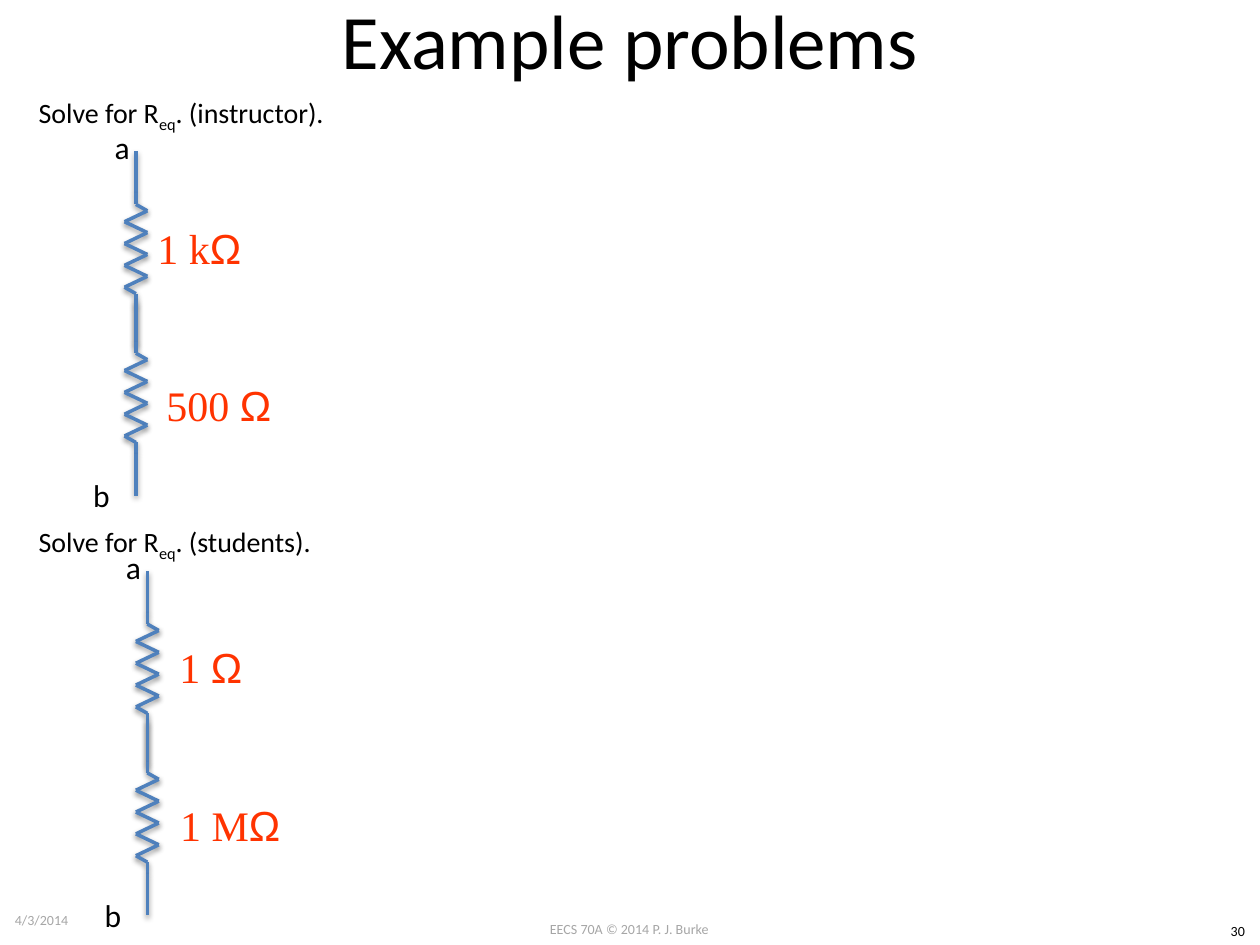
"""Build a slide with two series-resistor example problems."""
from itertools import pairwise

from pptx import Presentation
from pptx.dml.color import RGBColor
from pptx.enum.shapes import MSO_CONNECTOR
from pptx.enum.text import MSO_ANCHOR, PP_ALIGN
from pptx.util import Cm, Pt

COLORS = {"wire": "4F81BD", "value": "FF3300", "text": "000000", "muted": "A6A6A6"}
STYLES = {
    "title": ("text", {"name": "Calibri", "size": Pt(44)}),
    "prompt": ("text", {"name": "Calibri", "size": Pt(16)}),
    "node": ("text", {"name": "Calibri", "size": Pt(18)}),
    "value": ("value", {"name": "Times New Roman", "size": Pt(24)}),
    "unit": ("value", {"name": "Arial", "size": Pt(24)}),
    "footer": ("muted", {"name": "Calibri", "size": Pt(8)}),
    "number": ("text", {"name": "Calibri", "size": Pt(8)}),
}
SUBSCRIPT = "-25000"
CENTER = {"alignment": PP_ALIGN.CENTER}
MIDDLE = {"vertical_anchor": MSO_ANCHOR.MIDDLE}
NO_WRAP = {"word_wrap": False}

TITLE = "Example problems"
CIRCUITS = [
    {"who": "instructor", "values": ["1 k", "500 "], "offset": (0, 0),
     "prompt": (0.53, 1.8, 6.58, 0.94)},
    {"who": "students", "values": ["1 ", "1 M"], "offset": (0.23, 8.46),
     "prompt": (0.53, 10.44, 6.12, 0.94)},
]
NODES = [("a", (2.06, 2.46, 0.81, 1.02)), ("b", (1.63, 9.47, 0.86, 1.02))]
VALUE_BOXES = [(2.51, 4.06, 3.02, 1.85), (2.9, 7.24, 3.02, 1.85)]
FOOTERS = [
    ("EECS 70A © 2014 P. J. Burke", "footer", (9.73, 18.44, 5.92, 0.61), {}, CENTER),
    ("30", "number", (24.51, 18.47, 0.89, 0.61), {}, CENTER),
    ("4/3/2014", "footer", (0.05, 18.03, 5.92, 1.02), MIDDLE, {}),
]
WIRE_X, WIRE_Y, RESISTOR_STEP = 2.74, 3.05, 3.0
SWING, ZIG_TOP, ZIG_STEP = 0.23, 1.2, 0.22
RESISTOR = [
    (0, 0), (0, 0.85), (0, 1.07),
    *[((-1) ** i * SWING, ZIG_TOP + i * ZIG_STEP) for i in range(8)],
    (0, 2.87), (0, 3.1), (0, 3.94),
]


def fill_text(tf, runs, frame, para):
    for key, val in {"word_wrap": True, **frame}.items():
        setattr(tf, key, val)
    p = tf.paragraphs[0]
    for key, val in para.items():
        setattr(p, key, val)
    for text, style, *baseline in runs:
        r = p.add_run()
        r.text = text
        color, font = STYLES[style]
        for key, val in font.items():
            setattr(r.font, key, val)
        r.font.color.rgb = RGBColor.from_string(COLORS[color])
        for base in baseline:
            r.font._element.set("baseline", base)


def add_text(s, box, runs, frame, para):
    sp = s.shapes.add_textbox(*map(Cm, box))
    fill_text(sp.text_frame, runs, frame, para)


def add_resistor(s, x, y):
    group = s.shapes.add_group_shape()
    for (x1, y1), (x2, y2) in pairwise(RESISTOR):
        ends = (x + x1, y + y1, x + x2, y + y2)
        wire = group.shapes.add_connector(MSO_CONNECTOR.STRAIGHT, *map(Cm, ends))
        wire.line.color.rgb = RGBColor.from_string(COLORS["wire"])
        wire.line.width = Pt(2)


def add_circuit(s, circuit):
    dx, dy = circuit["offset"]

    def shift(box):
        return (box[0] + dx, box[1] + dy, *box[2:])

    for text, box in NODES:
        add_text(s, shift(box), [(text, "node")], NO_WRAP, {})
    for i, (value, box) in enumerate(zip(circuit["values"], VALUE_BOXES)):
        add_resistor(s, WIRE_X + dx, WIRE_Y + dy + i * RESISTOR_STEP)
        add_text(s, shift(box), [(value, "value"), ("Ω", "unit")], MIDDLE, CENTER)
    prompt = [("Solve for R", "prompt"), ("eq", "prompt", SUBSCRIPT),
              (f". ({circuit['who']}).", "prompt")]
    add_text(s, circuit["prompt"], prompt, NO_WRAP, {})


def main():
    prs = Presentation()
    prs.slide_width, prs.slide_height = Cm(25.4), Cm(19.05)
    s = prs.slides.add_slide(prs.slide_layouts[5])
    title = s.shapes.title
    box = {"left": 1.27, "top": -0.81, "width": 22.86, "height": 3.18}
    for key, val in box.items():
        setattr(title, key, Cm(val))
    fill_text(title.text_frame, [(TITLE, "title")], MIDDLE, CENTER)
    for circuit in CIRCUITS:
        add_circuit(s, circuit)
    for text, style, place, frame, para in FOOTERS:
        add_text(s, place, [(text, style)], frame, para)
    prs.save("out.pptx")


if __name__ == "__main__":
    main()
